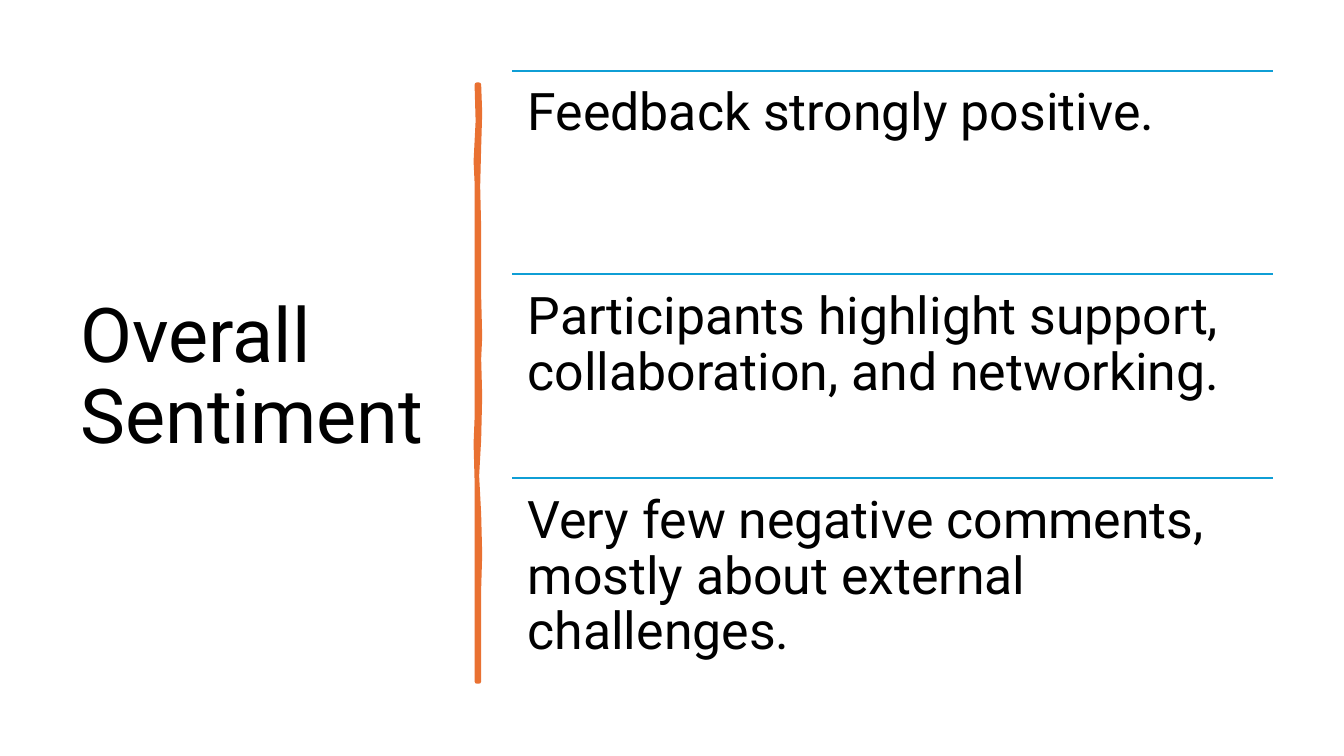
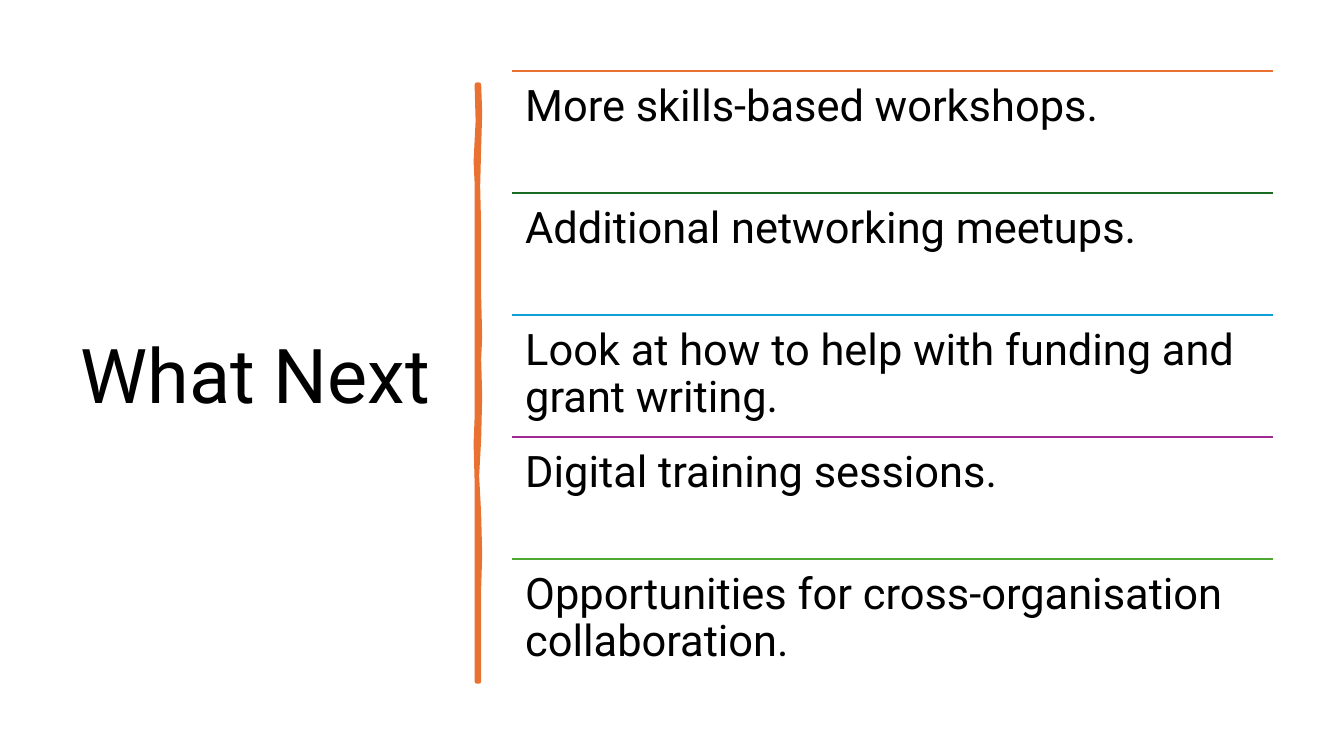
from dataclasses import dataclass

import lxml.etree
import pptx
import pptx.dml.color
import pptx.enum.shapes
import pptx.enum.text
import pptx.oxml.ns
import pptx.presentation
import pptx.slide
import pptx.util

Inches = pptx.util.Inches
Pt = pptx.util.Pt


@dataclass(frozen=True)
class Theme:
    font: str = "Roboto"
    text: str = "000000"
    orange: str = "E97132"
    green: str = "196B24"
    blue: str = "0F9ED5"
    purple: str = "A02B93"
    lime: str = "4EA72E"
    title_size: float = 54
    line_spacing: float = 0.9
    inset_ratio: float = 0.3  # row margin as a share of the type size
    rule_width: float = 1.5
    stroke_width: float = 3.25


THEME = Theme()


@dataclass(frozen=True)
class Frame:
    left: float
    top: float
    width: float
    height: float


TITLE_FRAME = Frame(0.7, 0.7, 3.73, 6.11)
LIST_FRAME = Frame(5.08, 0.7, 7.55, 6.06)


@dataclass(frozen=True)
class Item:
    text: str
    color: str


@dataclass(frozen=True)
class ListSlide:
    title: str
    size: float
    items: tuple[Item, ...]


SLIDES = (
    ListSlide("Overall Sentiment", 37, (
        Item("Feedback strongly positive.", THEME.blue),
        Item("Participants highlight support, collaboration, and networking.", THEME.blue),
        Item("Very few negative comments, mostly about external challenges.", THEME.blue),
    )),
    ListSlide("What Next", 31, (
        Item("More skills-based workshops.", THEME.orange),
        Item("Additional networking meetups.", THEME.green),
        Item("Look at how to help with funding and grant writing.", THEME.blue),
        Item("Digital training sessions.", THEME.purple),
        Item("Opportunities for cross-organisation collaboration.", THEME.lime),
    )),
)

# Hand-drawn divider: points down its right edge, then up its left edge.
STROKE_POINTS = (
    (4.75, 0.84), (4.76, 1.12), (4.75, 1.46), (4.74, 1.85), (4.75, 2.26),
    (4.75, 2.94), (4.76, 3.34), (4.75, 3.56), (4.76, 3.93), (4.75, 4.36),
    (4.73, 4.72), (4.75, 5.1), (4.76, 5.5), (4.75, 5.84), (4.75, 6.76),
    (4.73, 6.76), (4.73, 5.57), (4.73, 4.77), (4.72, 4.4), (4.73, 4.15),
    (4.73, 1.81), (4.72, 1.6), (4.74, 1.2), (4.73, 0.84),
)


def rgb(color: str) -> pptx.dml.color.RGBColor:
    return pptx.dml.color.RGBColor.from_string(color)


def apply(target: object, values: dict[str, object]) -> None:
    """Set each named attribute of the target."""
    for name, value in values.items():
        setattr(target, name, value)


def add_text(page: pptx.slide.Slide, frame: Frame, text: str, size: float,
             frame_format: dict[str, object]) -> None:
    box = page.shapes.add_textbox(
        Inches(frame.left), Inches(frame.top), Inches(frame.width), Inches(frame.height))
    apply(box.text_frame, {"word_wrap": True, **frame_format})
    para = box.text_frame.paragraphs[0]
    para.line_spacing = THEME.line_spacing
    span = para.add_run()
    span.text = text
    apply(span.font, {"name": THEME.font, "size": Pt(size)})
    span.font.color.rgb = rgb(THEME.text)


def add_rule(page: pptx.slide.Slide, left: float, top: float, width: float, color: str) -> None:
    rule = page.shapes.add_connector(
        pptx.enum.shapes.MSO_CONNECTOR.STRAIGHT,
        Inches(left), Inches(top), Inches(left + width), Inches(top))
    rule.line.color.rgb = rgb(color)
    rule.line.width = Pt(THEME.rule_width)
    lxml.etree.SubElement(rule._element.spPr, pptx.oxml.ns.qn("a:effectLst"))


def add_divider(page: pptx.slide.Slide) -> None:
    start, *others = [(Inches(x), Inches(y)) for x, y in STROKE_POINTS]
    builder = page.shapes.build_freeform(*start)
    builder.add_line_segments(others, close=True)
    divider = builder.convert_to_shape()
    divider.fill.solid()
    divider.fill.fore_color.rgb = rgb(THEME.orange)
    divider.line.color.rgb = rgb(THEME.orange)
    divider.line.width = Pt(THEME.stroke_width)
    outline = divider._element.spPr.get_or_add_ln()
    lxml.etree.SubElement(outline, pptx.oxml.ns.qn("a:round"))
    divider.shadow.inherit = False


def add_list(page: pptx.slide.Slide, content: ListSlide) -> None:
    row_height = LIST_FRAME.height / len(content.items)
    sides = ("left", "top", "right", "bottom")
    margins = {f"margin_{side}": Pt(content.size * THEME.inset_ratio) for side in sides}
    for index, item in enumerate(content.items):
        row = Frame(LIST_FRAME.left, LIST_FRAME.top + index * row_height,
                    LIST_FRAME.width, row_height)
        add_rule(page, row.left, row.top, row.width, item.color)
        add_text(page, row, item.text, content.size, margins)


def add_slide(deck: pptx.presentation.Presentation, content: ListSlide) -> None:
    page = deck.slides.add_slide(deck.slide_layouts[6])
    add_text(page, TITLE_FRAME, content.title, THEME.title_size,
             {"vertical_anchor": pptx.enum.text.MSO_ANCHOR.MIDDLE})
    add_divider(page)
    add_list(page, content)


def main() -> None:
    deck = pptx.Presentation()
    apply(deck, {"slide_width": Inches(13.33), "slide_height": Inches(7.5)})
    for content in SLIDES:
        add_slide(deck, content)
    deck.save("out.pptx")


if __name__ == "__main__":
    main()
